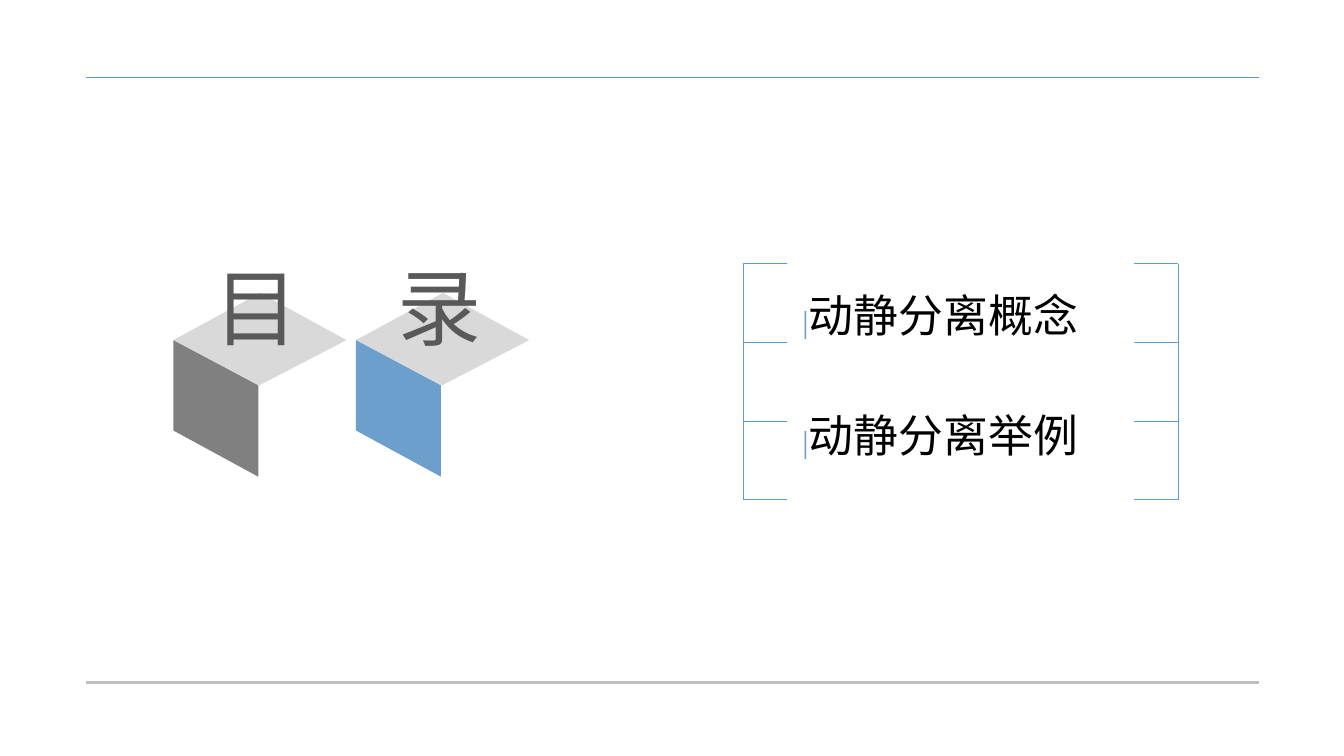
"""Build the agenda slide with two cubes and two bracketed topics."""
import lxml.etree
import pptx
import pptx.dml.color
import pptx.enum.shapes
import pptx.enum.text
import pptx.oxml.ns
import pptx.util

PX = 9525
FONT = "Noto Sans CJK SC"
BLACK = pptx.dml.color.RGBColor(0x00, 0x00, 0x00)
DARK_GREY = pptx.dml.color.RGBColor(0x59, 0x59, 0x59)
MID_GREY = pptx.dml.color.RGBColor(0x80, 0x80, 0x80)
RULE_GREY = pptx.dml.color.RGBColor(0xBE, 0xBE, 0xBE)
LIGHT_GREY = pptx.dml.color.RGBColor(0xD9, 0xD9, 0xD9)
BLUE = pptx.dml.color.RGBColor(0x6D, 0x9F, 0xCC)
LINE_BLUE = pptx.dml.color.RGBColor(0x5B, 0x9B, 0xD5)

CUBE_TOP = [(83, 279), (165, 324), (82, 367), (0, 324)]
CUBE_FRONT = [(0, 324), (81, 367), (81, 454), (0, 410)]
CUBES = [("目", MID_GREY), ("录", BLUE)]
CUBE_LEFT, CUBE_STEP = 165, 174
TOPICS = ["动静分离概念", "动静分离举例"]
TOPIC_TOP, TOPIC_STEP = 260, 114
BRACKET_TOP, BRACKET_BOTTOM, TICK_STEP = 251, 476, 75


def add_line(shapes, x1, y1, x2, y2, color, width):
    """Add a straight line without shadow."""
    line = shapes.add_connector(
        pptx.enum.shapes.MSO_CONNECTOR.STRAIGHT, x1 * PX, y1 * PX, x2 * PX, y2 * PX
    )
    line.line.color.rgb = color
    line.line.width = pptx.util.Pt(width)
    properties = line._element.spPr
    lxml.etree.SubElement(properties, pptx.oxml.ns.qn("a:effectLst"))


def add_face(shapes, points, left, color):
    """Add one filled face of a cube, moved right by left."""
    corners = [(x + left, y) for x, y in points]
    builder = shapes.build_freeform(*corners[0], scale=PX)
    builder.add_line_segments(corners[1:], close=True)
    face = builder.convert_to_shape()
    face.shadow.inherit = False
    face.fill.solid()
    face.fill.fore_color.rgb = color
    face.line.fill.background()


def add_text(shapes, left, top, width, height, runs, inset=None):
    """Add a one-paragraph text box from (text, size, color) runs."""
    box = shapes.add_textbox(left * PX, top * PX, width * PX, height * PX)
    frame = box.text_frame
    frame.word_wrap = True
    frame.auto_size = pptx.enum.text.MSO_AUTO_SIZE.SHAPE_TO_FIT_TEXT
    if inset is not None:
        frame.margin_left = frame.margin_right = inset * PX
        frame.margin_top = frame.margin_bottom = inset * PX
    paragraph = frame.paragraphs[0]
    for text, size, color in runs:
        run = paragraph.add_run()
        run.text = text
        run.font.size = pptx.util.Pt(size)
        run.font.name = FONT
        run.font.color.rgb = color
        east_asian = lxml.etree.SubElement(run.font._element, pptx.oxml.ns.qn("a:ea"))
        east_asian.set("typeface", FONT)
    return paragraph


def add_cube(shapes, left, letter, front_color):
    """Add a cube with a large character on top."""
    add_face(shapes, CUBE_TOP, left, LIGHT_GREY)
    add_face(shapes, CUBE_FRONT, left, front_color)
    add_text(shapes, left + 30, 239, 106, 107, [(letter, 60, DARK_GREY)])


def add_bracket(shapes, spine, tip):
    """Add a grouped bracket: a spine with ticks towards tip."""
    group = shapes.add_group_shape()
    add_line(group.shapes, spine, BRACKET_TOP, spine, BRACKET_BOTTOM, LINE_BLUE, 0.5)
    for y in range(BRACKET_TOP, BRACKET_BOTTOM + 1, TICK_STEP):
        add_line(group.shapes, tip, y, spine, y, LINE_BLUE, 0.5)


def main():
    """Build and save the presentation."""
    presentation = pptx.Presentation()
    presentation.slide_width = 1280 * PX
    presentation.slide_height = 720 * PX
    slide = presentation.slides.add_slide(presentation.slide_layouts[6])
    shapes = slide.shapes
    for index, (letter, color) in enumerate(CUBES):
        add_cube(shapes, CUBE_LEFT + index * CUBE_STEP, letter, color)
    add_line(shapes, 1199, 74, 82, 74, LINE_BLUE, 0.5)
    add_line(shapes, 1199, 650, 82, 650, RULE_GREY, 1.5)
    for index, topic in enumerate(TOPICS):
        runs = [("|", 18, BLUE), (topic, 32, BLACK)]
        top = TOPIC_TOP + index * TOPIC_STEP
        paragraph = add_text(shapes, 750, top, 324, 81, runs, inset=14)
        paragraph.alignment = pptx.enum.text.PP_ALIGN.JUSTIFY
    add_bracket(shapes, 708, 750)
    add_bracket(shapes, 1122, 1080)
    presentation.save("out.pptx")


if __name__ == "__main__":
    main()
